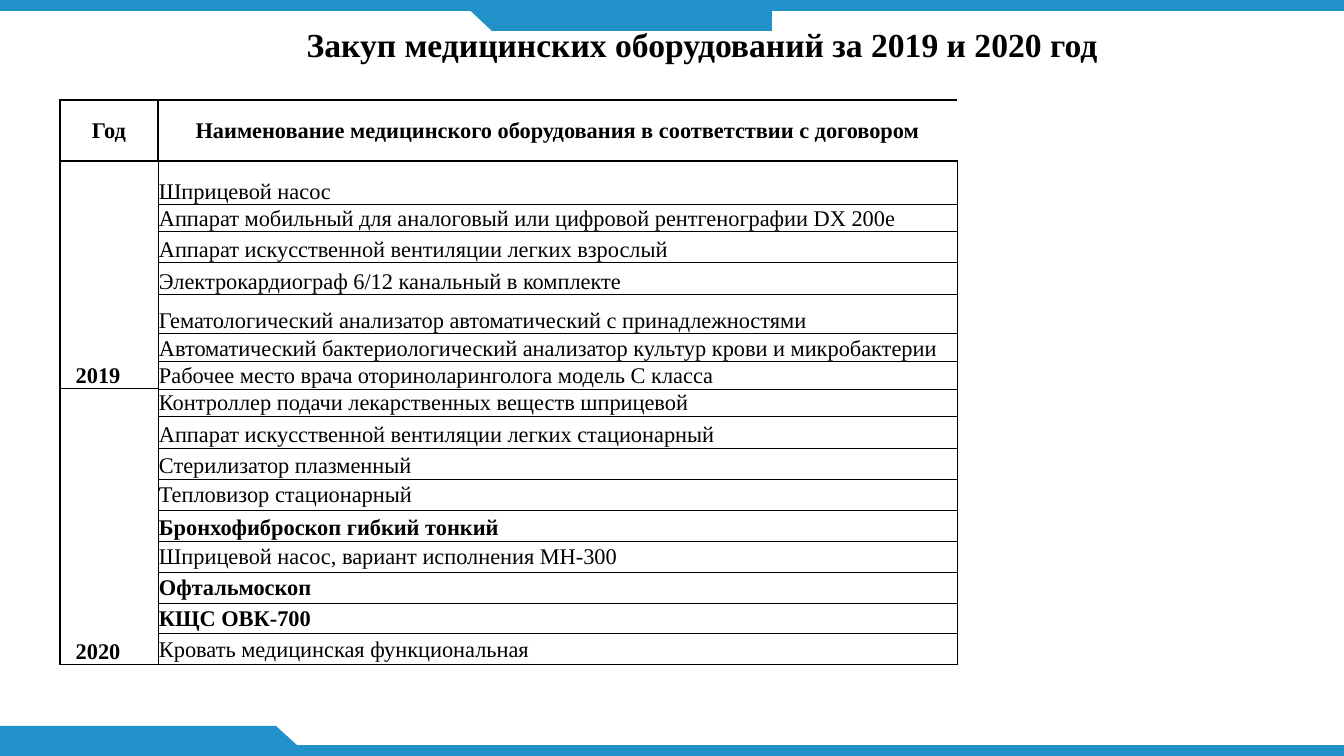
from pptx import Presentation
from pptx.dml.color import RGBColor
from pptx.enum.shapes import MSO_SHAPE
from pptx.enum.text import MSO_ANCHOR, PP_ALIGN
from pptx.oxml.ns import qn
from pptx.util import Emu, Pt
from lxml import etree

RECTANGLE, TRIANGLE = MSO_SHAPE.RECTANGLE, MSO_SHAPE.FLOWCHART_MERGE
TOP, MIDDLE, BOTTOM = MSO_ANCHOR.TOP, MSO_ANCHOR.MIDDLE, MSO_ANCHOR.BOTTOM
LEFT, CENTER = PP_ALIGN.LEFT, PP_ALIGN.CENTER
TITLE_ONLY = 5

EMU_PER_PX = 914400 / 100.8
FONT = "Times New Roman"
BLUE, BLACK = "2191C9", "000000"
THIN, THICK = 0.5, 1

COLUMN_WIDTHS = [98, 799]
HEADER_HEIGHT = 61
HEADERS = ["Год", "Наименование медицинского оборудования в соответствии с договором"]

# Each item: name, row height, anchor, bold
PURCHASES = {
    "2019": [
        ("Шприцевой насос", 43, BOTTOM, False),
        ("Аппарат мобильный для аналоговый или цифровой рентгенографии DX 200е", 27, BOTTOM, False),
        ("Аппарат искусственной вентиляции легких взрослый", 31, BOTTOM, False),
        ("Электрокардиограф 6/12 канальный в комплекте", 32, BOTTOM, False),
        ("Гематологический анализатор автоматический с принадлежностями", 39, BOTTOM, False),
        ("Автоматический бактериологический анализатор культур крови и микробактерии", 28, BOTTOM, False),
        ("Рабочее место врача оториноларинголога модель C класса", 28, BOTTOM, False),
    ],
    "2020": [
        ("Контроллер подачи лекарственных веществ шприцевой", 27, BOTTOM, False),
        ("Аппарат искусственной вентиляции легких стационарный", 32, BOTTOM, False),
        ("Стерилизатор плазменный", 31, BOTTOM, False),
        ("Тепловизор стационарный", 31, MIDDLE, False),
        ("Бронхофиброскоп гибкий тонкий", 31, BOTTOM, True),
        ("Шприцевой насос, вариант исполнения МН-300", 31, MIDDLE, False),
        ("Офтальмоскоп", 31, MIDDLE, True),
        ("КЩС ОВК-700", 31, MIDDLE, True),
        ("Кровать медицинская функциональная", 31, MIDDLE, False),
    ],
}


def px(value):
    return Emu(round(value * EMU_PER_PX))


def color(value):
    return RGBColor.from_string(value)


def write(frame, text, size=16, bold=False, align=LEFT):
    para = frame.paragraphs[0]
    para.alignment = align
    span = para.add_run()
    span.text = text
    span.font.name = FONT
    span.font.size = Pt(size)
    span.font.bold = bold
    span.font.color.rgb = color(BLACK)


def add_block(page, kind, left, top, width, height, rotation=0):
    block = page.shapes.add_shape(kind, px(left), px(top), px(width), px(height))
    block.shadow.inherit = False
    block.fill.solid()
    block.fill.fore_color.rgb = color(BLUE)
    block.line.fill.background()
    block.rotation = rotation


def add_title(page, text):
    title = page.shapes.title
    title.left, title.top, title.width, title.height = px(83), px(19), px(1238), px(50)
    frame = title.text_frame
    frame.word_wrap = True
    frame.vertical_anchor = TOP
    write(frame, text, size=24, bold=True, align=CENTER)


def set_borders(cell, **widths):
    """Draw the named edges (L, R, T, B); the others stay without a line."""
    properties = cell._tc.get_or_add_tcPr()
    for index, edge in enumerate("LRTB"):
        line = etree.Element(qn(f"a:ln{edge}"))
        if edge in widths:
            line.set("w", str(Pt(widths[edge])))
            fill = etree.SubElement(line, qn("a:solidFill"))
            etree.SubElement(fill, qn("a:srgbClr")).set("val", BLACK)
        else:
            etree.SubElement(line, qn("a:noFill"))
        properties.insert(index, line)


def fill_cell(cell, text, anchor=MIDDLE, right_inset=1, **text_format):
    cell.margin_left, cell.margin_right = px(1), px(right_inset)
    cell.margin_top, cell.margin_bottom = px(1), 0
    cell.vertical_anchor = anchor
    write(cell.text_frame, text, **text_format)


def add_purchase_table(page):
    heights = [HEADER_HEIGHT] + [item[1] for items in PURCHASES.values() for item in items]
    frame = page.shapes.add_table(len(heights), len(COLUMN_WIDTHS), px(60), px(100),
                                  px(sum(COLUMN_WIDTHS)), px(sum(heights)))
    table = frame.table
    table.first_row = table.horz_banding = False
    for column, width in zip(table.columns, COLUMN_WIDTHS):
        column.width = px(width)
    for row, height in zip(table.rows, heights):
        row.height = px(height)
    for cell in table.iter_cells():
        cell.fill.background()

    # Header row, open on the right
    for index, text in enumerate(HEADERS):
        fill_cell(table.cell(0, index), text, bold=True, align=CENTER)
    set_borders(table.cell(0, 0), L=THICK, R=THICK, T=THICK, B=THICK)
    set_borders(table.cell(0, 1), L=THICK, T=THICK, B=THICK)

    # One merged year cell beside its list of equipment
    start = 1
    for year, items in PURCHASES.items():
        end = start + len(items) - 1
        for row, (name, _, anchor, bold) in enumerate(items, start):
            top = THICK if row == 1 else THIN
            fill_cell(table.cell(row, 1), name, anchor, bold=bold)
            set_borders(table.cell(row, 1), L=THIN, R=THIN, T=top, B=THIN)
            if row > start:
                edges = {"B": THIN} if row == end else {}
                set_borders(table.cell(row, 0), L=THIN, R=THIN, **edges)
        year_cell = table.cell(start, 0)
        year_cell.merge(table.cell(end, 0))
        fill_cell(year_cell, year, BOTTOM, right_inset=23, bold=True, align=CENTER)
        set_borders(year_cell, L=THICK, R=THIN, T=THICK, B=THIN)
        start = end + 1


def main():
    deck = Presentation()
    deck.slide_width, deck.slide_height = px(1344), px(756)
    page = deck.slides.add_slide(deck.slide_layouts[TITLE_ONLY])

    # Bands and slanted tabs
    add_block(page, RECTANGLE, 0, 0, 1344, 11)
    add_block(page, RECTANGLE, 0, 745, 1344, 11)
    add_block(page, RECTANGLE, 492, 1, 280, 30)
    add_block(page, TRIANGLE, 459, 0, 66, 31)
    add_block(page, RECTANGLE, 0, 726, 276, 30)
    add_block(page, TRIANGLE, 243, 726, 66, 30, rotation=180)

    add_title(page, "Закуп медицинских оборудований за 2019 и 2020 год")
    add_purchase_table(page)
    deck.save("out.pptx")


if __name__ == "__main__":
    main()
